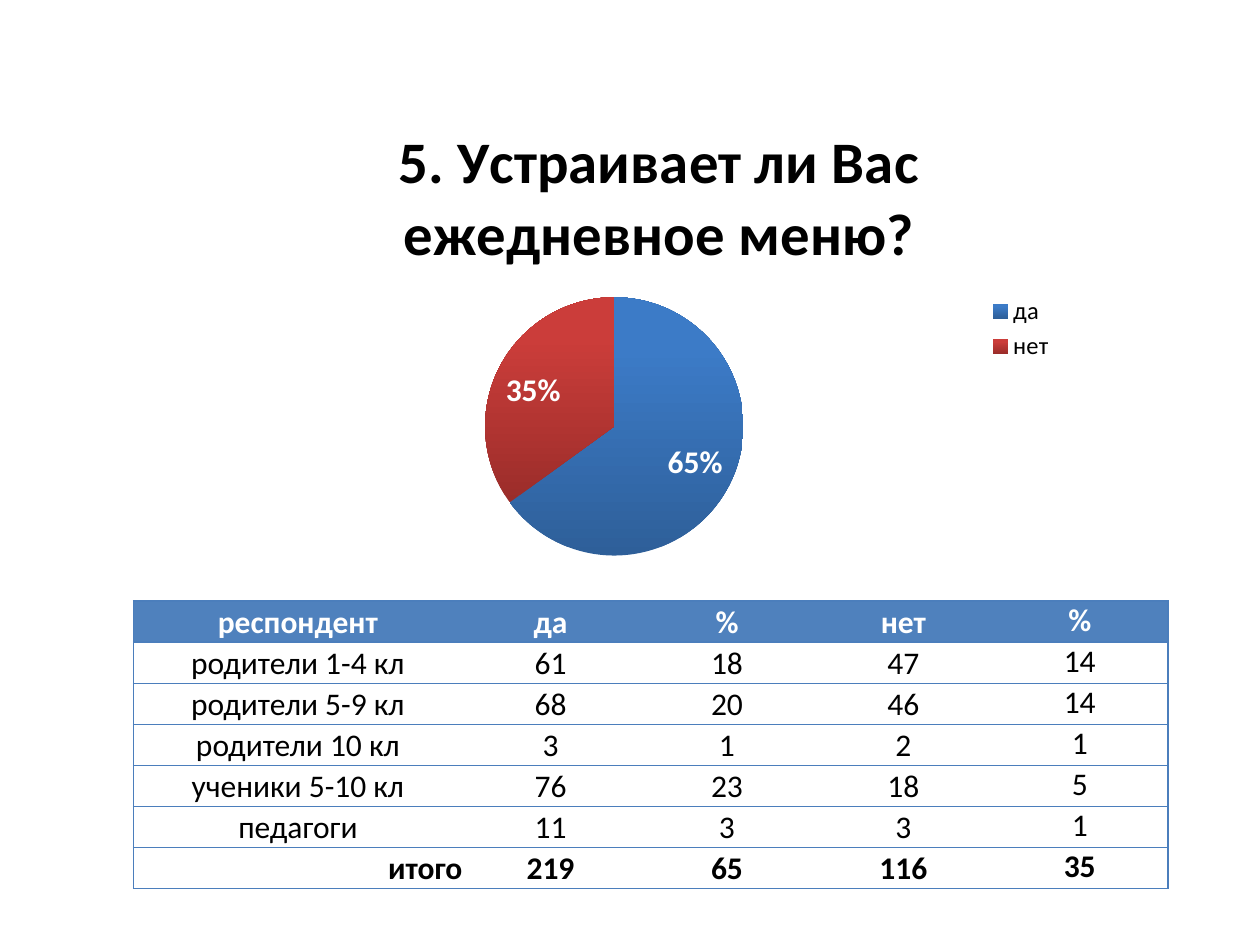
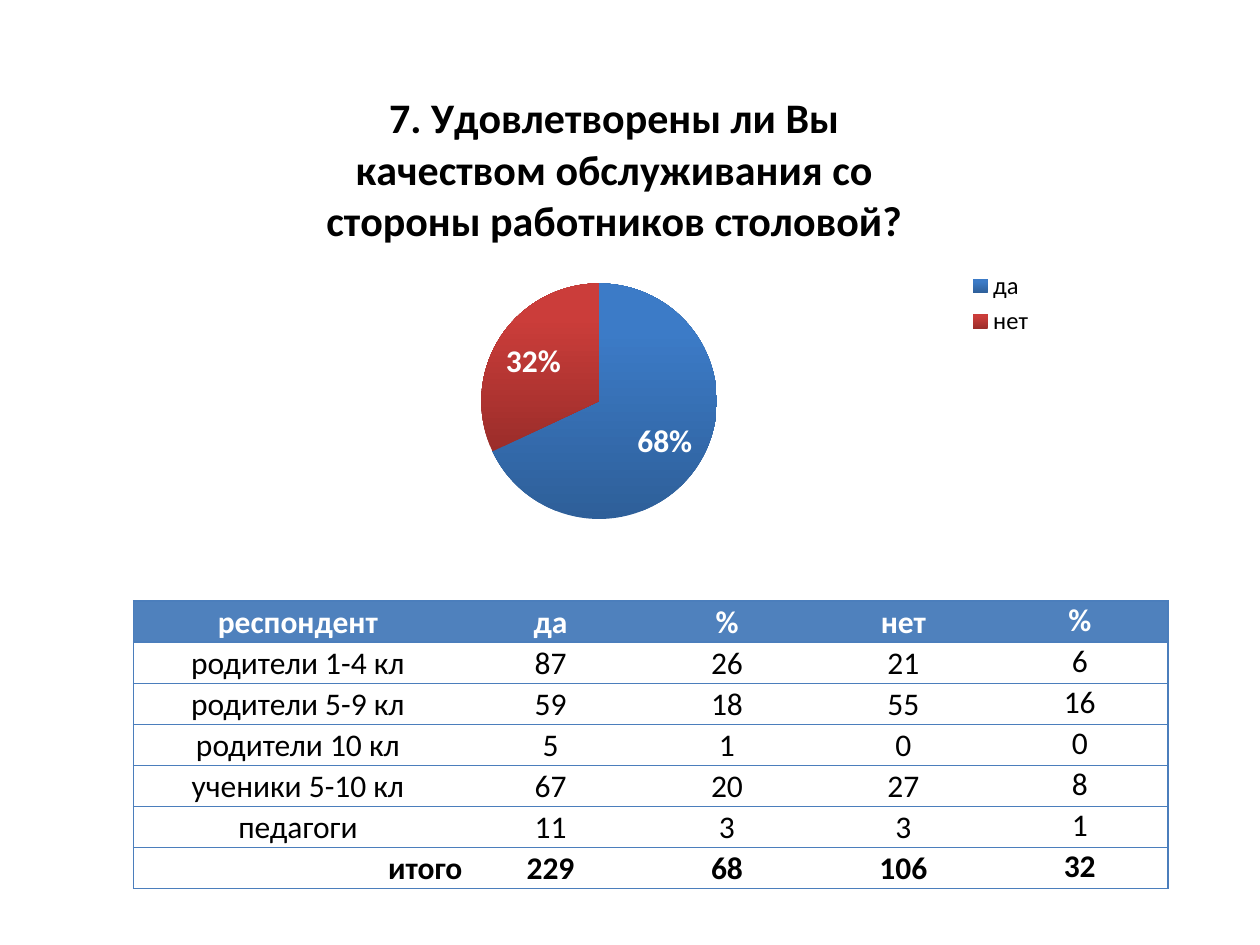
from dataclasses import dataclass

from lxml.etree import SubElement
from pptx import Presentation
from pptx.chart.data import CategoryChartData
from pptx.dml.color import RGBColor
from pptx.enum.chart import XL_CHART_TYPE, XL_LABEL_POSITION, XL_LEGEND_POSITION
from pptx.enum.text import MSO_ANCHOR, PP_ALIGN
from pptx.oxml.ns import qn
from pptx.util import Inches, Pt

# Content: lengths in inches, chart_box is left, top, width, height
HEADER = ["респондент", "да", "%", "нет", "%"]
RESPONDENTS = ["родители 1-4 кл", "родители 5-9 кл", "родители 10 кл",
               "ученики 5-10 кл", "педагоги", "итого"]
ANSWERS = ["да", "нет"]
QUESTIONS = [
    {
        "title": "5. Устраивает ли Вас ежедневное меню?",
        "title_size": 33.6,
        "title_at": (3.08, 0.87),
        "chart_box": (1.93, 0.6, 6.54, 4.02),
        "pie_at": (3.85, 2.36),
        "pie_diameter": 2.05,
        "shares": [65, 35],
        "counts": [(61, 18, 47, 14), (68, 20, 46, 14), (3, 1, 2, 1),
                   (76, 23, 18, 5), (11, 3, 3, 1), (219, 65, 116, 35)],
    },
    {
        "title": "7. Удовлетворены ли Вы качеством обслуживания "
                 "со стороны работников столовой?",
        "title_size": 24,
        "title_at": (2.53, 0.65),
        "chart_box": (1.85, 0.44, 6.46, 3.94),
        "pie_at": (3.82, 2.25),
        "pie_diameter": 1.87,
        "shares": [68, 32],
        "counts": [(87, 26, 21, 6), (59, 18, 55, 16), (5, 1, 0, 0),
                   (67, 20, 27, 8), (11, 3, 3, 1), (229, 68, 106, 32)],
    },
]
TABLE_BOX = (1.06, 4.77, 8.2, 2.28)
COLUMN_WIDTHS = [2.61, 1.4, 1.4, 1.4, 1.4]
PLAIN_TABLE_STYLE = "{2D5ABB26-0587-4C30-8999-92F81FD0307C}"


@dataclass(frozen=True)
class Theme:
    font: str = "Calibri"
    black: str = "000000"
    white: str = "FFFFFF"
    header: str = "4F81BD"
    border: str = "4B7EBC"
    border_width: float = 0.75
    slices: tuple = (("2E5F99", "3C7BC7"), ("9B2D2A", "CB3D3A"))
    body_size: int = 18
    legend_size: int = 14


THEME = Theme()


# Text
def format_font(font, size=THEME.body_size, color=THEME.black, bold=False):
    font.name = THEME.font
    font.size = Pt(size)
    font.bold = bold
    font.color.rgb = RGBColor.from_string(color)


def write_text(frame, text, align=PP_ALIGN.CENTER, **font_format):
    para = frame.paragraphs[0]
    para.alignment = align
    span = para.add_run()
    span.text = text
    format_font(span.font, **font_format)


# Chart
def place_part(parent, index, **fractions):
    """Fix the place of a chart part as fractions of the chart."""
    layout = parent.find(qn("c:layout"))
    if layout is None:
        layout = parent.makeelement(qn("c:layout"), {})
        parent.insert(index, layout)
    manual = SubElement(layout, qn("c:manualLayout"))
    if "w" in fractions:
        SubElement(manual, qn("c:layoutTarget"), val="inner")
    for axis in "xy":
        SubElement(manual, qn(f"c:{axis}Mode"), val="edge")
    for name, value in fractions.items():
        SubElement(manual, qn(f"c:{name}"), val=f"{value:.4f}")


def add_pie(page, question):
    left, top, width, height = question["chart_box"]
    data = CategoryChartData()
    data.categories = ANSWERS
    data.add_series("Series 1", question["shares"])
    chart = page.shapes.add_chart(
        XL_CHART_TYPE.PIE, *map(Inches, question["chart_box"]), data).chart
    format_font(chart.font)

    def fractions(x, y):
        return {"x": (x - left) / width, "y": (y - top) / height}

    chart.has_title = True
    title = chart.chart_title
    write_text(title.text_frame, question["title"],
               size=question["title_size"], bold=True)
    title.include_in_layout = False
    place_part(title._element, 1, **fractions(*question["title_at"]))

    diameter = question["pie_diameter"]
    place_part(chart._chartSpace.chart.plotArea, 0, **fractions(*question["pie_at"]),
               w=diameter / width, h=diameter / height)

    chart.has_legend = True
    chart.legend.position = XL_LEGEND_POSITION.RIGHT
    chart.legend.include_in_layout = False
    format_font(chart.legend.font, size=THEME.legend_size)

    plot = chart.plots[0]
    plot.vary_by_categories = True
    for index, (dark, light) in enumerate(THEME.slices):
        fill = plot.series[0].points[index].format.fill
        fill.gradient()
        fill.gradient_angle = 90
        for stop, color, position in zip(fill.gradient_stops, (dark, light), (0, 0.8)):
            stop.color.rgb = RGBColor.from_string(color)
            stop.position = position

    plot.has_data_labels = True
    labels = plot.data_labels
    labels.show_percentage = True
    labels.show_value = False
    labels.number_format = "0%"
    labels.number_format_is_linked = False
    labels.position = XL_LABEL_POSITION.INSIDE_END
    format_font(labels.font, color=THEME.white, bold=True)


# Table
def add_borders(cell, sides):
    properties = cell._tc.get_or_add_tcPr()
    for index, side in enumerate(sides):
        line = properties.makeelement(
            qn(f"a:ln{side}"), {"w": str(Pt(THEME.border_width))})
        SubElement(SubElement(line, qn("a:solidFill")), qn("a:srgbClr"), val=THEME.border)
        properties.insert(index, line)


def add_answer_table(page, question):
    rows = [HEADER] + [[name, *counts]
                       for name, counts in zip(RESPONDENTS, question["counts"])]
    last_row, last_column = len(rows) - 1, len(HEADER) - 1
    frame = page.shapes.add_table(len(rows), len(HEADER), *map(Inches, TABLE_BOX))
    table = frame.table
    table.first_row = table.horz_banding = False
    table._tbl.tblPr.find(qn("a:tableStyleId")).text = PLAIN_TABLE_STYLE
    for column, width in zip(table.columns, COLUMN_WIDTHS):
        column.width = Inches(width)

    for row_index, row in enumerate(rows):
        is_header, is_total = row_index == 0, row_index == last_row
        for column_index, value in enumerate(row):
            cell = table.cell(row_index, column_index)
            cell.margin_left = cell.margin_right = 0
            cell.margin_top = cell.margin_bottom = 0
            is_last = column_index == last_column
            cell.vertical_anchor = MSO_ANCHOR.TOP if is_last else MSO_ANCHOR.BOTTOM
            if is_header:
                cell.fill.solid()
                cell.fill.fore_color.rgb = RGBColor.from_string(THEME.header)
            else:
                cell.fill.background()
            outer = "L" if column_index == 0 else "R" if is_last else ""
            add_borders(cell, outer + "TB")
            is_total_name = is_total and column_index == 0
            write_text(cell.text_frame, str(value),
                       align=PP_ALIGN.RIGHT if is_total_name else PP_ALIGN.CENTER,
                       color=THEME.white if is_header else THEME.black,
                       bold=is_header or is_total)


def main():
    deck = Presentation()
    deck.slide_width, deck.slide_height = Inches(10), Inches(7.5)
    blank_layout = deck.slide_layouts[6]
    for question in QUESTIONS:
        page = deck.slides.add_slide(blank_layout)
        add_answer_table(page, question)
        add_pie(page, question)
    deck.save("out.pptx")


if __name__ == "__main__":
    main()
